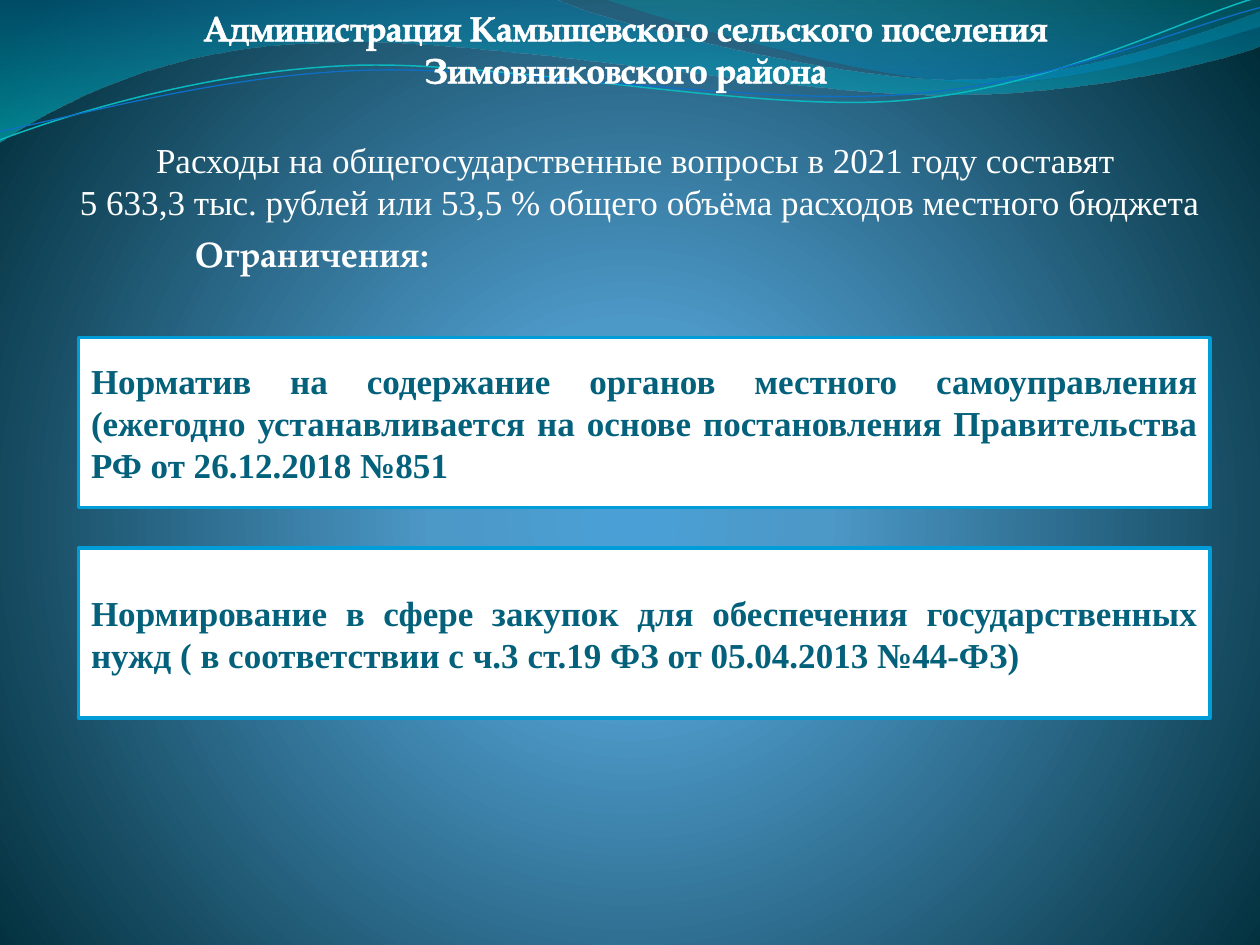
"""Builds a slide on general state spending and its limits in a local budget."""
from math import cos, radians, sin

from lxml.etree import SubElement
from pptx import Presentation
from pptx.dml.color import RGBColor
from pptx.enum.shapes import MSO_SHAPE as Shape
from pptx.enum.text import MSO_ANCHOR as Anchor, MSO_AUTO_SIZE as AutoSize, PP_ALIGN as Align
from pptx.oxml.ns import qn
from pptx.util import Inches, Pt

COLORS = {
    "white": "FFFFFF", "border": "009DD9", "ink": "04617B",
    "glow": "4AA0D6", "sky": "4C98C7", "night": "002C38",
    "deep": "0074A1", "teal": "00C6CF", "sea": "00A1A9", "azure": "008BBF",
    "aqua": "0AB8BF", "blue": "0F6FC6",
}
SERIF, HEADING = "Times New Roman", "TeX Gyre Pagella"
COLUMNS, ROWS = 100, 75
LINE_TILT = -2.7

WIDE_WAVE = [
    [(0, 0)], [(44, -0.1)],
    [(47.6, 1.7), (66.4, 6.3), (75.8, 6.3)], [(85.3, 6.3), (95.8, 2.6), (100, 0.9)],
    [(100.1, 3.6)],
    [(98.3, 4.4), (87, 7.6), (74.6, 7.5)], [(62.2, 7.5), (38.2, 2.8), (25.7, 3.4)],
    [(12.9, 3.6), (4.6, 8.3), (-0.1, 11.3)], [(0, 0)],
]
RIGHT_WAVE = [
    [(47.9, -0.1)],
    [(50.9, 1.1), (68.2, 6.2), (76.9, 6.5)], [(85.6, 6.9), (96.1, 3.2), (100, 2.1)],
    [(100, 0)], [(47.9, -0.1)],
]
AQUA_LINE = [
    [(0, 11.1)],
    [(4.8, 9.3), (15.8, 5.7), (27.7, 5.2)], [(39.5, 4.7), (59.3, 8.9), (71.3, 8)],
    [(83.3, 7.1), (93.8, 1.5), (99.8, -0.2)],
]
BLUE_LINE = [
    [(0, 10.4)],
    [(4.7, 9.6), (16.4, 6.1), (28.3, 5.6)], [(40.3, 5.1), (59.7, 8.4), (71.7, 7.5)],
    [(83.6, 6.7), (94.1, 2.1), (100, 0.6)],
]
LIMITS = [
    "Норматив на содержание органов местного самоуправления (ежегодно устанавливается "
    "на основе постановления Правительства РФ от 26.12.2018 №851",
    "Нормирование в сфере закупок для обеспечения государственных нужд "
    "( в соответствии с ч.3 ст.19 ФЗ от 05.04.2013 №44-ФЗ)",
]


def rgb(name):
    """Return the named colour."""
    return RGBColor.from_string(COLORS[name])


def add_gradient(parent, stops):
    """Add a gradient of (position, colour, opacity) stops, in percent."""
    gradient = SubElement(parent, qn("a:gradFill"), rotWithShape="1")
    stop_list = SubElement(gradient, qn("a:gsLst"))
    for position, color, opacity in stops:
        stop = SubElement(stop_list, qn("a:gs"), pos=str(position * 1000))
        value = SubElement(stop, qn("a:srgbClr"), val=COLORS[color])
        if opacity < 100:
            SubElement(value, qn("a:alpha"), val=str(opacity * 1000))
    return gradient


def turn(points, angle, pivot):
    """Turn points clockwise around a pivot by an angle in degrees."""
    cosine, sine = cos(radians(angle)), sin(radians(angle))
    offsets = [(x - pivot[0], y - pivot[1]) for x, y in points]
    return [(pivot[0] + x * cosine - y * sine, pivot[1] + x * sine + y * cosine)
            for x, y in offsets]


def bend(shape, segments):
    """Join the vertices of each three-point segment into one cubic curve."""
    vertices = iter(list(shape._element.iter(qn("a:lnTo"))))
    for segment in segments[1:]:
        group = [next(vertices) for _ in segment]
        if len(group) == 3:
            curve = group[0].getparent().makeelement(qn("a:cubicBezTo"))
            group[0].addprevious(curve)
            for vertex in group:
                curve.append(vertex[0])
                vertex.getparent().remove(vertex)


def write(frame, *texts, font=SERIF, color="white", bold=False, align=Align.CENTER,
          anchor=Anchor.TOP, wrap=True, spacing=0, outline=0):
    """Fill a text frame with one formatted paragraph per text."""
    frame.auto_size = AutoSize.NONE
    frame.word_wrap = wrap
    frame.vertical_anchor = anchor
    for index, text in enumerate(texts):
        paragraph = frame.add_paragraph() if index else frame.paragraphs[0]
        paragraph.alignment = align
        run = paragraph.add_run()
        run.text = text
        run.font.name, run.font.size, run.font.bold = font, Pt(20), bold
        run.font.color.rgb = rgb(color)
        properties = run.font._element
        if spacing:
            properties.set("spc", str(int(spacing * 100)))
        if outline:
            line = SubElement(properties, qn("a:ln"), w=str(Pt(outline)))
            fill = SubElement(line, qn("a:solidFill"))
            SubElement(fill, qn("a:srgbClr"), val=COLORS[color])
            properties.insert(0, line)


class SlideBuilder:
    """Holds the grid and the current slide."""

    def __init__(self, presentation):
        """Add a title-only slide and measure its grid."""
        self.slide = presentation.slides.add_slide(presentation.slide_layouts[5])
        self.shapes = self.slide.shapes
        self.column = presentation.slide_width / COLUMNS
        self.row = presentation.slide_height / ROWS

    def place(self, left, top, width, height):
        """Convert a grid box to slide lengths."""
        return (round(left * self.column), round(top * self.row),
                round(width * self.column), round(height * self.row))

    def background(self, stops):
        """Paint a round gradient behind the slide."""
        self.slide.background.fill.solid()
        properties = self.slide.background._cSld.bg.bgPr
        properties.remove(properties[0])
        gradient = add_gradient(properties, stops)
        circle = SubElement(gradient, qn("a:path"), path="circle")
        SubElement(circle, qn("a:fillToRect"), l="10000", t="110000", r="10000", b="100000")
        properties.insert(0, gradient)

    def curve(self, segments, closed=False, tilt=0, pivot=(0, 0)):
        """Draw an outline of straight and cubic segments."""
        points = turn([point for segment in segments for point in segment], -tilt, pivot)
        points = [(x * self.column, y * self.row) for x, y in points]
        builder = self.shapes.build_freeform(*points[0], scale=1.0)
        builder.add_line_segments(points[1:], close=closed)
        shape = builder.convert_to_shape()
        bend(shape, segments)
        shape.rotation = tilt
        shape.shadow.inherit = False
        return shape

    def wave(self, segments, stops):
        """Draw a translucent wave with a vertical gradient."""
        shape = self.curve(segments, closed=True)
        shape.line.fill.background()
        properties = shape._element.spPr
        gradient = add_gradient(properties, stops)
        SubElement(gradient, qn("a:lin"), ang="5400000", scaled="0")
        properties.find(qn("a:custGeom")).addnext(gradient)

    def wave_line(self, segments, pivot, color, width):
        """Draw an open, tilted wave line."""
        shape = self.curve(segments, tilt=LINE_TILT, pivot=pivot)
        shape.fill.background()
        shape.line.color.rgb, shape.line.width = rgb(color), Pt(width)

    def title(self, text, box, **style):
        """Place the title in front of the waves."""
        title = self.shapes.title
        title.left, title.top, title.width, title.height = self.place(*box)
        write(title.text_frame, text, **style)
        self.shapes._spTree.append(title._element)

    def text(self, texts, box, **style):
        """Add a text box."""
        write(self.shapes.add_textbox(*self.place(*box)).text_frame, *texts, **style)

    def panel(self, text, box):
        """Add a white bordered panel with justified text."""
        shape = self.shapes.add_shape(Shape.RECTANGLE, *self.place(*box))
        shape.shadow.inherit = False
        shape.fill.solid()
        shape.fill.fore_color.rgb = rgb("white")
        shape.line.color.rgb, shape.line.width = rgb("border"), Pt(2)
        write(shape.text_frame, text, color="ink", bold=True,
              align=Align.JUSTIFY, anchor=Anchor.MIDDLE)


def main():
    """Build and save the slide."""
    presentation = Presentation()
    presentation.slide_width, presentation.slide_height = Inches(10), Inches(7.5)
    builder = SlideBuilder(presentation)
    builder.background([(0, "glow", 100), (25, "sky", 100), (100, "night", 100)])
    builder.wave(WIDE_WAVE, [(0, "deep", 45), (100, "teal", 55)])
    builder.wave(RIGHT_WAVE, [(0, "sea", 30), (80, "azure", 45)])
    builder.wave_line(AQUA_LINE, (49.9, 5.75), "aqua", 0.85)
    builder.wave_line(BLUE_LINE, (49.95, 5.9), "blue", 0.75)
    builder.text(["Расходы на общегосударственные вопросы в 2021 году составят ",
                  "5 633,3 тыс. рублей или 53,5 % общего объёма расходов местного бюджета"],
                 (4.33, 10.5, 92.9, 7.7))
    builder.text(["Ограничения:"], (13.4, 18, 22.8, 4.4),
                 font=HEADING, bold=True, wrap=False, spacing=0.5)
    for index, limit in enumerate(LIMITS):
        builder.panel(limit, (6.24, 26.8 + 16.7 * index, 89.8, 13.5))
    builder.title("Администрация Камышевского сельского поселения Зимовниковского района",
                  (8.66, 0, 82, 7.7), font=HEADING, bold=True, outline=1.45)
    presentation.save("out.pptx")


if __name__ == "__main__":
    main()
